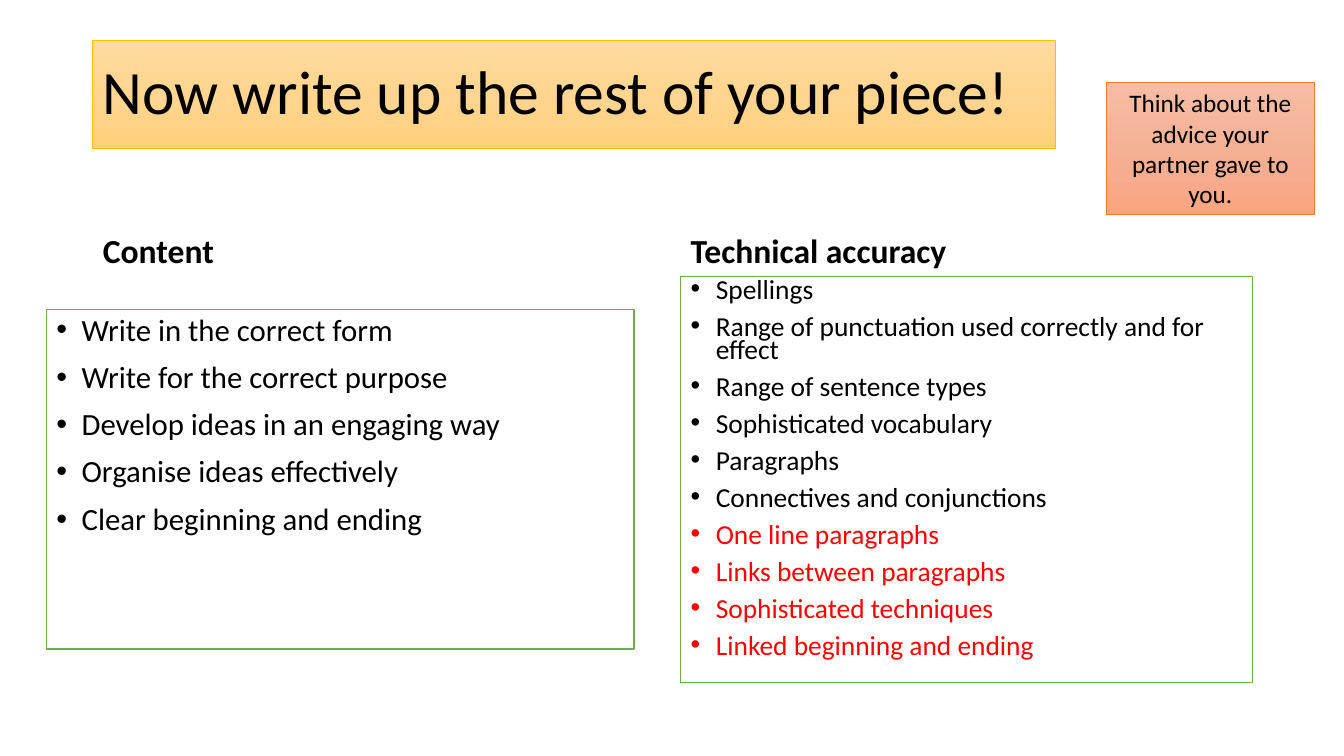
from copy import deepcopy

from lxml.etree import SubElement
from pptx import Presentation
from pptx.dml.color import RGBColor
from pptx.enum.shapes import MSO_SHAPE
from pptx.enum.text import MSO_ANCHOR as ANCHOR, MSO_AUTO_SIZE as FIT, PP_ALIGN as ALIGN
from pptx.oxml.ns import qn
from pptx.util import Pt

PX = 9144
COLORS = {
    "text": "000000",
    "stretch": "FF0000",
    "panel": "FFFFFF",
    "panel_line": "70AD47",
    "title_line": "FFC000",
    "note_line": "ED7D31",
}
TITLE_SHADES = ("FFDB9E", "FFD590", "FFD07C")
NOTE_SHADES = ("F7BDA5", "F5B196", "F8A582")

CONTENT = [
    "Write in the correct form",
    "Write for the correct purpose",
    "Develop ideas in an engaging way",
    "Organise ideas effectively",
    "Clear beginning and ending",
]
ACCURACY = [
    "Spellings",
    "Range of punctuation used correctly and for effect",
    "Range of sentence types",
    "Sophisticated vocabulary",
    "Paragraphs",
    "Connectives and conjunctions",
]
STRETCH = [
    "One line paragraphs",
    "Links between paragraphs",
    "Sophisticated techniques",
    "Linked beginning and ending",
]


def rgb(name):
    return RGBColor.from_string(COLORS.get(name, name))


def write(para, text, size, color="text", bold=False, align=ALIGN.LEFT,
          spacing=0.9, before=0, bullet=False):
    if bullet:
        properties = para._p.get_or_add_pPr()
        properties.set("marL", str(25 * PX))
        properties.set("indent", str(-25 * PX))
        SubElement(properties, qn("a:buFont")).set("typeface", "Arial")
        SubElement(properties, qn("a:buChar")).set("char", "•")
    para.alignment = align
    para.line_spacing = spacing
    para.space_before = Pt(before)
    span = para.add_run()
    span.text = text
    span.font.name = "Calibri"
    span.font.size = Pt(size)
    span.font.bold = bold
    span.font.color.rgb = rgb(color)


class Page:
    def __init__(self, deck):
        self.slide = deck.slides.add_slide(deck.slide_layouts[4])
        self.holders = {holder.placeholder_format.idx: holder
                        for holder in self.slide.placeholders}

    def place(self, index, bounds, anchor):
        box = self.holders[index]
        box.left, box.top, box.width, box.height = (value * PX for value in bounds)
        frame = box.text_frame
        frame.auto_size = FIT.NONE
        frame.word_wrap = True
        frame.vertical_anchor = anchor
        return box

    def outline(self, box, color, width):
        box.line.color.rgb = rgb(color)
        box.line.width = Pt(width)

    def shade(self, box, shades):
        box.fill.gradient()
        box.fill.gradient_angle = 270
        stop_list = box._element.spPr.find(qn("a:gradFill")).find(qn("a:gsLst"))
        stop_list.insert(1, deepcopy(stop_list[0]))
        for position, (stop, color) in enumerate(zip(box.fill.gradient_stops, shades)):
            stop.position = position / 2
            stop.color.rgb = rgb(color)

    def title(self, text, bounds):
        box = self.place(0, bounds, ANCHOR.MIDDLE)
        self.shade(box, TITLE_SHADES)
        self.outline(box, "title_line", 0.5)
        write(box.text_frame.paragraphs[0], text, 44)

    def heading(self, index, text, bounds):
        box = self.place(index, bounds, ANCHOR.BOTTOM)
        write(box.text_frame.paragraphs[0], text, 24, bold=True)

    def checklist(self, index, items, bounds, size, spacing):
        box = self.place(index, bounds, ANCHOR.TOP)
        box.fill.solid()
        box.fill.fore_color.rgb = rgb("panel")
        self.outline(box, "panel_line", 1)
        frame = box.text_frame
        for number, (text, color) in enumerate(items):
            para = frame.add_paragraph() if number else frame.paragraphs[0]
            write(para, text, size, color, spacing=spacing,
                  before=10 if number else 0, bullet=True)

    def note(self, text, bounds):
        box = self.slide.shapes.add_shape(MSO_SHAPE.RECTANGLE,
                                          *(value * PX for value in bounds))
        box.shadow.inherit = False
        self.shade(box, NOTE_SHADES)
        self.outline(box, "note_line", 0.5)
        frame = box.text_frame
        frame.word_wrap = True
        frame.auto_size = FIT.SHAPE_TO_FIT_TEXT
        frame.vertical_anchor = ANCHOR.TOP
        write(frame.paragraphs[0], text, 18, align=ALIGN.CENTER, spacing=1.0)


def main():
    deck = Presentation()
    deck.slide_width, deck.slide_height = 1333 * PX, 750 * PX
    page = Page(deck)
    page.title("Now write up the rest of your piece!", (92, 40, 955, 107))
    page.heading(1, "Content", (92, 184, 564, 90))
    page.heading(3, "Technical accuracy", (675, 184, 567, 90))
    page.checklist(2, [(text, "text") for text in CONTENT],
                   (46, 307, 583, 337), 22, 0.9)
    page.checklist(4, [(text, "text") for text in ACCURACY]
                   + [(text, "stretch") for text in STRETCH],
                   (675, 274, 567, 403), 19.6, 0.7)
    page.note("Think about the advice your partner gave to you.", (1097, 82, 207, 131))
    deck.save("out.pptx")


if __name__ == "__main__":
    main()
